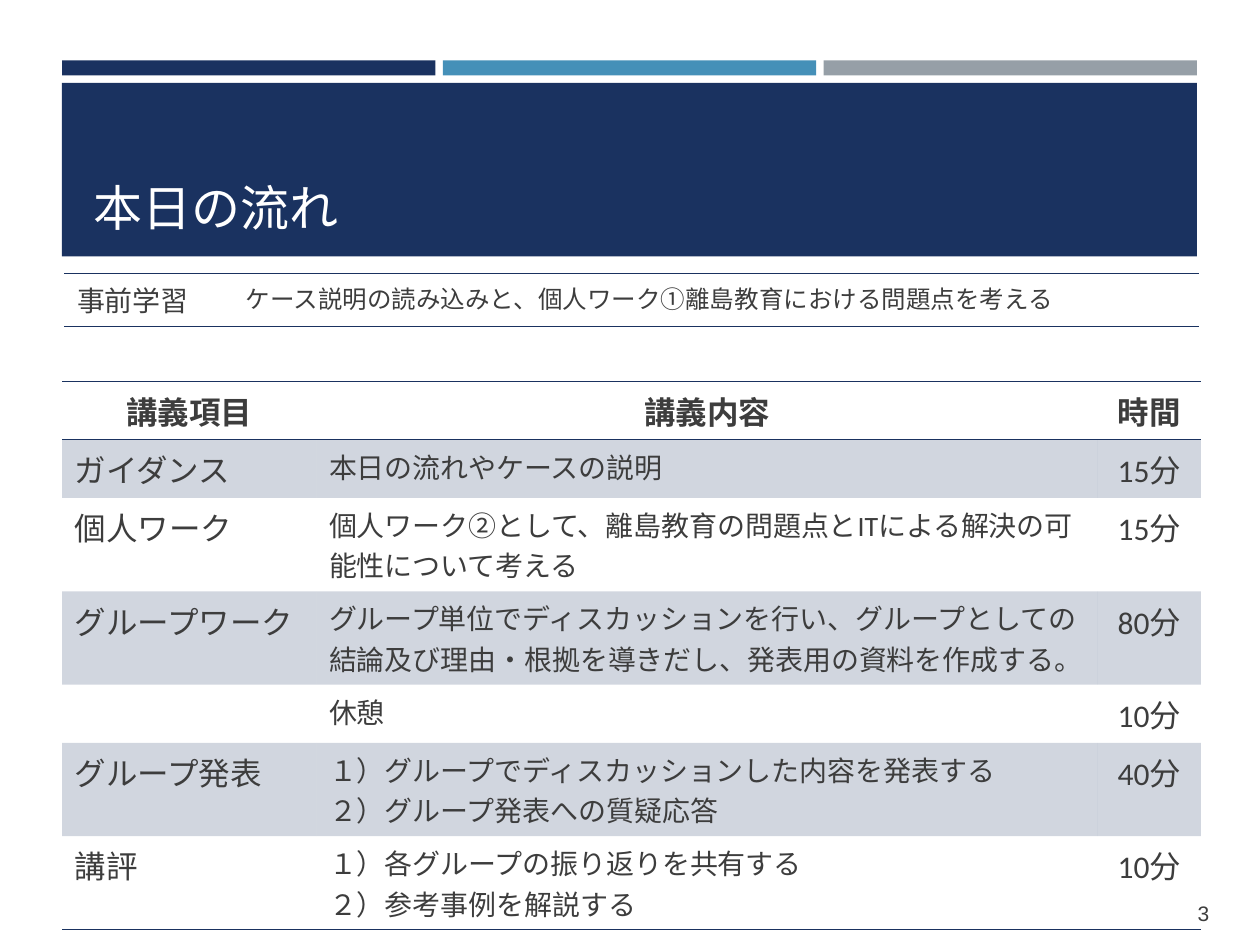
from lxml import etree
from pptx import Presentation
from pptx import util as u
from pptx.dml import color
from pptx.enum import shapes, text
from pptx.oxml import ns

COLORS = {"navy": "1A3260", "blue": "4590B8", "gray": "969FA7",
          "ink": "3D3D3D", "white": "FFFFFF"}
PLAIN_STYLE = "{2D5ABB26-0587-4C30-8999-92F81FD0307C}"
ROW_HEIGHT = 1.04

PREPARATION = ("事前学習", "ケース説明の読み込みと、個人ワーク①離島教育における問題点を考える")
HEADINGS = ("講義項目", "講義内容", "時間")
SCHEDULE = [
    ("ガイダンス", "本日の流れやケースの説明", "15分"),
    ("個人ワーク", "個人ワーク②として、離島教育の問題点とITによる解決の可能性について考える", "15分"),
    ("グループワーク", "グループ単位でディスカッションを行い、グループとしての結論及び理由・根拠を導きだし、"
     "発表用の資料を作成する。", "80分"),
    ("", "休憩", "10分"),
    ("グループ発表", "１）グループでディスカッションした内容を発表する\n２）グループ発表への質疑応答", "40分"),
    ("講評", "１）各グループの振り返りを共有する\n２）参考事例を解説する", "10分"),
]


def rgb(name):
    return color.RGBColor.from_string(COLORS[name])


def write(frame, words, size, ink="ink", align=text.PP_ALIGN.LEFT, bold=False, font="Calibri"):
    frame.text = words
    for para in frame.paragraphs:
        para.alignment = align
        para.font.size = u.Pt(size)
        for span in para.runs:
            span.font.name = font
            span.font.size = u.Pt(size)
            span.font.bold = bold
            span.font.color.rgb = rgb(ink)


def add_block(page, left, top, width, height, fill):
    block = page.shapes.add_shape(shapes.MSO_SHAPE.RECTANGLE, u.Cm(left), u.Cm(top),
                                  u.Cm(width), u.Cm(height))
    block.shadow.inherit = False
    block.fill.solid()
    block.fill.fore_color.rgb = rgb(fill)
    block.line.fill.background()


def rule_cell(cell, *sides):
    """Draw 1 pt lines; sides are "T" and "B", in that order."""
    properties = cell._tc.get_or_add_tcPr()
    for index, side in enumerate(sides):
        line = etree.Element(ns.qn(f"a:ln{side}"), w=str(u.Pt(1)))
        fill = etree.SubElement(line, ns.qn("a:solidFill"))
        etree.SubElement(fill, ns.qn("a:srgbClr"), val=COLORS["navy"])
        properties.insert(index, line)


def tint_cell(cell):
    cell.fill.solid()
    cell.fill.fore_color.rgb = rgb("navy")
    tone = cell._tc.tcPr.find(".//" + ns.qn("a:srgbClr"))
    etree.SubElement(tone, ns.qn("a:alpha"), val="20000")


def add_plain_table(page, left, top, widths, row_count):
    frame = page.shapes.add_table(row_count, len(widths), u.Cm(left), u.Cm(top),
                                  u.Cm(sum(widths)), u.Cm(ROW_HEIGHT * row_count))
    table = frame.table
    table.first_row = table.horz_banding = False
    table._tbl.tblPr.find(ns.qn("a:tableStyleId")).text = PLAIN_STYLE
    for column, width in zip(table.columns, widths):
        column.width = u.Cm(width)
    for cell in table.iter_cells():
        cell.fill.background()
    return table


def add_header(page, left, top, width):
    # Three bars above a title panel
    gap = 0.15
    bar_width = (width - 2 * gap) / 3
    for index, fill in enumerate(("navy", "blue", "gray")):
        add_block(page, left + index * (bar_width + gap), top, bar_width, 0.3, fill)
    add_block(page, left, top + 0.45, width, 3.5, "navy")

    # Title, brought in front of the panel
    title = page.shapes.title
    title.left, title.top = u.Cm(left + 0.38), u.Cm(top + 0.68)
    title.width, title.height = u.Cm(width - 0.7), u.Cm(3)
    write(title.text_frame, "本日の流れ", 28, "white")
    title.text_frame.vertical_anchor = text.MSO_ANCHOR.BOTTOM
    page.shapes._spTree.append(title._element)


def add_preparation(page, left, top, width):
    label_width = 3.4
    table = add_plain_table(page, left, top, (label_width, width - label_width), 1)
    for cell, words, size in zip(table.iter_cells(), PREPARATION, (16, 14)):
        write(cell.text_frame, words, size)
        rule_cell(cell, "T", "B")


def add_schedule(page, left, top, width):
    item_width, time_width = 5.13, 2.08
    widths = (item_width, width - item_width - time_width, time_width)
    table = add_plain_table(page, left, top, widths, len(SCHEDULE) + 1)
    center, start = text.PP_ALIGN.CENTER, text.PP_ALIGN.LEFT

    # Heading row
    for column, words in enumerate(HEADINGS):
        cell = table.cell(0, column)
        write(cell.text_frame, words, 18, align=center, bold=True)
        rule_cell(cell, "T", "B")

    # Body rows, every other one tinted
    for row, entry in enumerate(SCHEDULE, 1):
        for column, (words, size, align) in enumerate(
                zip(entry, (18, 16, 18), (start, start, center))):
            cell = table.cell(row, column)
            write(cell.text_frame, words, size, align=align)
            if row % 2:
                tint_cell(cell)
            if row == len(SCHEDULE):
                rule_cell(cell, "B")


def add_page_number(page, left, top, width, height):
    box = page.shapes.add_textbox(u.Cm(left), u.Cm(top), u.Cm(width), u.Cm(height))
    box.text_frame.word_wrap = True
    write(box.text_frame, "3", 12, align=text.PP_ALIGN.RIGHT, font="Arial")


def main():
    deck = Presentation()
    deck.slide_width, deck.slide_height = u.Cm(25.4), u.Cm(19.05)
    page = deck.slides.add_slide(deck.slide_layouts[5])
    add_header(page, 1.25, 1.22, 22.88)
    add_schedule(page, 1.25, 7.69, 22.96)
    add_preparation(page, 1.3, 5.51, 22.88)
    add_page_number(page, 22.5, 18.03, 2.13, 1.02)
    deck.save("out.pptx")


if __name__ == "__main__":
    main()
